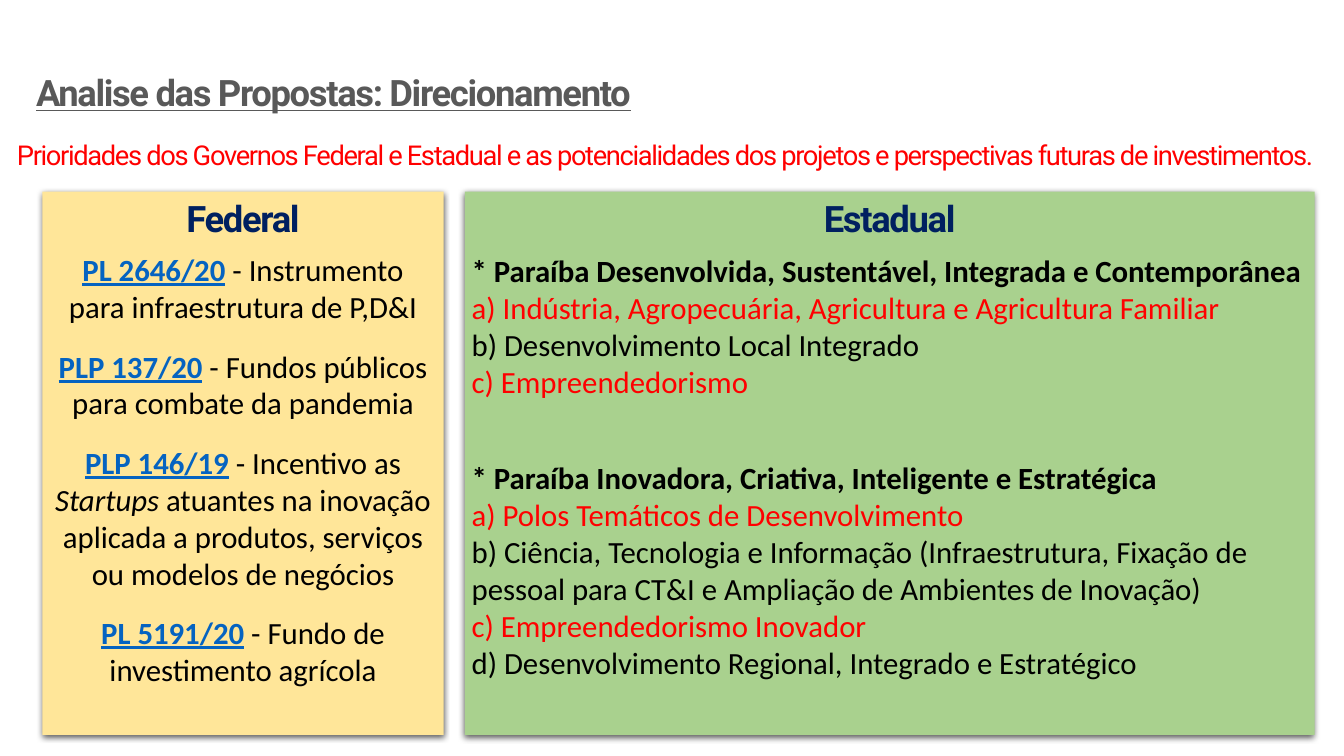
from lxml import etree
from pptx import Presentation
from pptx.dml.color import RGBColor
from pptx.enum.shapes import MSO_SHAPE
from pptx.enum.text import PP_ALIGN
from pptx.oxml import parse_xml
from pptx.oxml.ns import nsdecls, qn
from pptx.util import Inches, Pt

COLORS = {
    "gray": "595959", "red": "FF0000", "navy": "002060", "link": "0563C1",
    "black": "000000", "yellow": "FFE699", "green": "A9D18E",
}

# Bill number, then (text, italic) pieces of its description
BILLS = [
    ("PL 2646/20", [("Instrumento para infraestrutura de P,D&I", False)]),
    ("PLP 137/20", [("Fundos públicos para combate da pandemia", False)]),
    ("PLP 146/19", [
        ("Incentivo as ", False), ("Startups", True),
        (" atuantes na inovação aplicada a produtos, serviços ou modelos de negócios", False)]),
    ("PL 5191/20", [("Fundo de investimento agrícola", False)]),
]

# Programme, then (text, colour) of its axes
PROGRAMMES = [
    ("* Paraíba Desenvolvida, Sustentável, Integrada e Contemporânea", [
        ("a) Indústria, Agropecuária, Agricultura e Agricultura Familiar", "red"),
        ("b) Desenvolvimento Local Integrado", "black"),
        ("c) Empreendedorismo", "red")]),
    ("* Paraíba Inovadora, Criativa, Inteligente e Estratégica", [
        ("a) Polos Temáticos de Desenvolvimento", "red"),
        ("b) Ciência, Tecnologia e Informação (Infraestrutura, Fixação de pessoal "
         "para CT&I e Ampliação de Ambientes de Inovação)", "black"),
        ("c) Empreendedorismo Inovador", "red"),
        ("d) Desenvolvimento Regional, Integrado e Estratégico", "black")]),
]

PANEL_TOP, PANEL_HEIGHT, HEADING_HEIGHT = 1.9, 5.39, 0.54


def add_run(p, text, size=22, font="Calibri", color="black", bold=False,
            italic=False, underline=False, spacing=None):
    r = p.add_run()
    r.text = text
    f = r.font
    f.size, f.name = Pt(size), font
    f.bold, f.italic, f.underline = bold, italic, underline
    f.color.rgb = RGBColor.from_string(COLORS[color])
    if spacing is not None:
        r._r.get_or_add_rPr().set("spc", str(spacing * 100))


def add_text_box(s, left, top, width, height):
    tf = s.shapes.add_textbox(Inches(left), Inches(top), Inches(width), Inches(height)).text_frame
    tf.word_wrap = True
    return tf


def next_paragraph(tf, first, align=PP_ALIGN.LEFT):
    p = tf.paragraphs[0] if first else tf.add_paragraph()
    p.alignment = align
    return p


def add_heading(s, text, left, top, width, height, align=PP_ALIGN.LEFT, **fmt):
    p = next_paragraph(add_text_box(s, left, top, width, height), True, align)
    add_run(p, text, font="Roboto", spacing=-1, **fmt)


def add_shadow(sp):
    sp.shadow.inherit = False
    effects = sp._element.spPr.find(qn("a:effectLst"))
    effects.append(parse_xml(
        f'<a:outerShdw {nsdecls("a")} blurRad="{Pt(4.5)}" dist="{Pt(1.5)}" dir="5400000" '
        'algn="ctr" rotWithShape="0"><a:srgbClr val="000000"><a:alpha val="63000"/>'
        '</a:srgbClr></a:outerShdw>'))


def add_panel(s, title, left, width, fill):
    sp = s.shapes.add_shape(MSO_SHAPE.RECTANGLE, Inches(left), Inches(PANEL_TOP),
                            Inches(width), Inches(PANEL_HEIGHT))
    sp.fill.solid()
    sp.fill.fore_color.rgb = RGBColor.from_string(COLORS[fill])
    sp.line.fill.background()
    add_shadow(sp)
    add_heading(s, title, left, PANEL_TOP, width, HEADING_HEIGHT,
                align=PP_ALIGN.CENTER, size=26, color="navy", bold=True)


def add_bills(s, left, top, width, height):
    tf = add_text_box(s, left, top, width, height)
    for i, (number, pieces) in enumerate(BILLS):
        p = next_paragraph(tf, i == 0, PP_ALIGN.CENTER)
        p.space_after = Pt(16)
        add_run(p, number, color="link", bold=True, underline=True)
        add_run(p, " - ")
        for text, italic in pieces:
            add_run(p, text, italic=italic)


def add_programmes(s, left, top, width, height):
    tf = add_text_box(s, left, top, width, height)
    for i, (name, axes) in enumerate(PROGRAMMES):
        p = next_paragraph(tf, i == 0)
        if i:
            p.space_before = Pt(42.5)
        add_run(p, name, bold=True)
        for text, color in axes:
            add_run(next_paragraph(tf, False), text, color=color)


def main():
    prs = Presentation()
    prs.slide_width, prs.slide_height = Inches(13.33), Inches(7.5)
    s = prs.slides.add_slide(prs.slide_layouts[6])

    # Title and subtitle
    add_heading(s, "Analise das Propostas: Direcionamento", 0.26, 0.65, 9.76, 0.54,
                size=26, color="gray", bold=True, underline=True)
    add_heading(s, "Prioridades dos Governos Federal e Estadual e as potencialidades dos "
                "projetos e perspectivas futuras de investimentos.",
                0.07, 1.32, 13.27, 0.43, size=19.5, color="red")

    # Federal panel
    add_panel(s, "Federal", 0.42, 3.98, "yellow")
    add_bills(s, 0.42, 2.44, 3.98, 4.48)

    # State panel
    add_panel(s, "Estadual", 4.61, 8.43, "green")
    add_programmes(s, 4.58, 2.45, 8.46, 4.4)

    prs.save("out.pptx")


if __name__ == "__main__":
    main()
